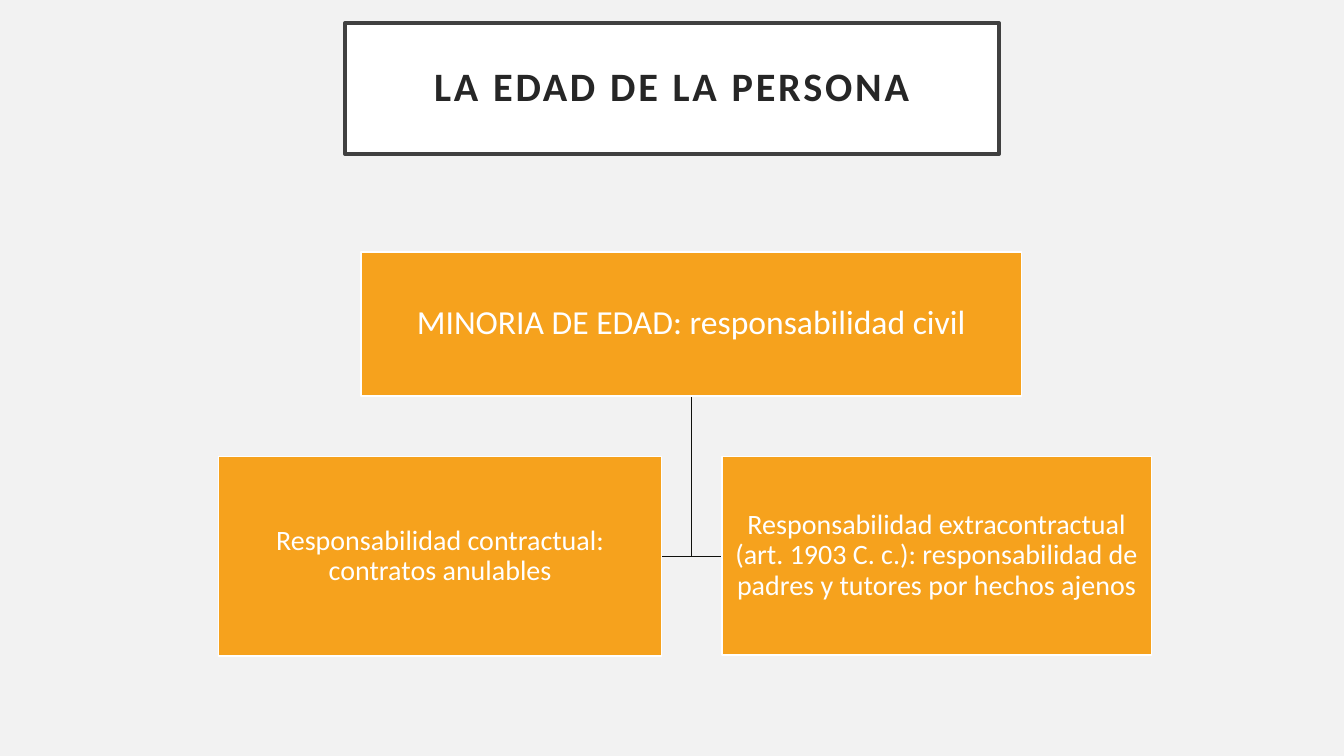
"""Build the slide on age and civil liability."""
from pptx import Presentation
from pptx.dml.color import RGBColor
from pptx.enum.shapes import MSO_SHAPE
from pptx.enum.text import MSO_ANCHOR, PP_ALIGN
from pptx.util import Inches, Pt

BACKGROUND = RGBColor(0xF2, 0xF2, 0xF2)
WHITE = RGBColor(0xFF, 0xFF, 0xFF)
ORANGE = RGBColor(0xF6, 0xA2, 0x1D)
FRAME = RGBColor(0x40, 0x40, 0x40)
TITLE_TEXT = RGBColor(0x26, 0x26, 0x26)
BRANCH = RGBColor(0x10, 0x11, 0x0D)
FONT = "Calibri"


def add_box(s, box, text, size, fill=ORANGE, line=WHITE, weight=1, color=WHITE, inset=0.01):
    """Add a filled rectangle with centred text and return its run."""
    sp = s.shapes.add_shape(MSO_SHAPE.RECTANGLE, *map(Inches, box))
    sp.shadow.inherit = False
    sp.fill.solid()
    sp.fill.fore_color.rgb = fill
    sp.line.color.rgb = line
    sp.line.width = Pt(weight)
    tf = sp.text_frame
    tf.word_wrap = True
    tf.vertical_anchor = MSO_ANCHOR.MIDDLE
    tf.margin_left = tf.margin_right = tf.margin_top = tf.margin_bottom = Inches(inset)
    p = tf.paragraphs[0]
    p.alignment = PP_ALIGN.CENTER
    p.line_spacing = 0.9
    r = p.add_run()
    r.text = text
    r.font.name = FONT
    r.font.size = Pt(size)
    r.font.color.rgb = color
    return r


def add_title(s, box, text):
    """Add the framed title with bold, spaced letters."""
    r = add_box(s, box, text, 28.8, WHITE, FRAME, 2.5, TITLE_TEXT, 0.2)
    r.font.bold = True
    r.font._element.set("spc", "200")


def add_branch(s, x, top, bottom, end_x):
    """Add an elbow line going down and then sideways."""
    builder = s.shapes.build_freeform(Inches(x), Inches(top))
    points = [(x, bottom), (end_x, bottom)]
    builder.add_line_segments([(Inches(a), Inches(b)) for a, b in points], close=False)
    sp = builder.convert_to_shape()
    sp.shadow.inherit = False
    sp.fill.background()
    sp.line.color.rgb = BRANCH
    sp.line.width = Pt(1)


def main():
    """Build and save the slide."""
    prs = Presentation()
    prs.slide_width, prs.slide_height = Inches(13.33), Inches(7.5)
    s = prs.slides.add_slide(prs.slide_layouts[6])
    s.background.fill.solid()
    s.background.fill.fore_color.rgb = BACKGROUND

    add_title(s, (3.42, 0.23, 6.49, 1.3), "LA EDAD DE LA PERSONA")
    for end_x in (7.16, 6.56):
        add_branch(s, 6.86, 3.93, 5.52, end_x)
    add_box(s, (3.58, 2.5, 6.55, 1.43), "MINORIA DE EDAD: responsabilidad civil", 24, inset=0.02)
    add_box(s, (2.17, 4.53, 4.39, 1.98), "Responsabilidad contractual: contratos anulables", 20)
    add_box(s, (7.16, 4.53, 4.26, 1.97),
            "Responsabilidad extracontractual (art. 1903 C. c.): "
            "responsabilidad de padres y tutores por hechos ajenos", 20)
    prs.save("out.pptx")


if __name__ == "__main__":
    main()
